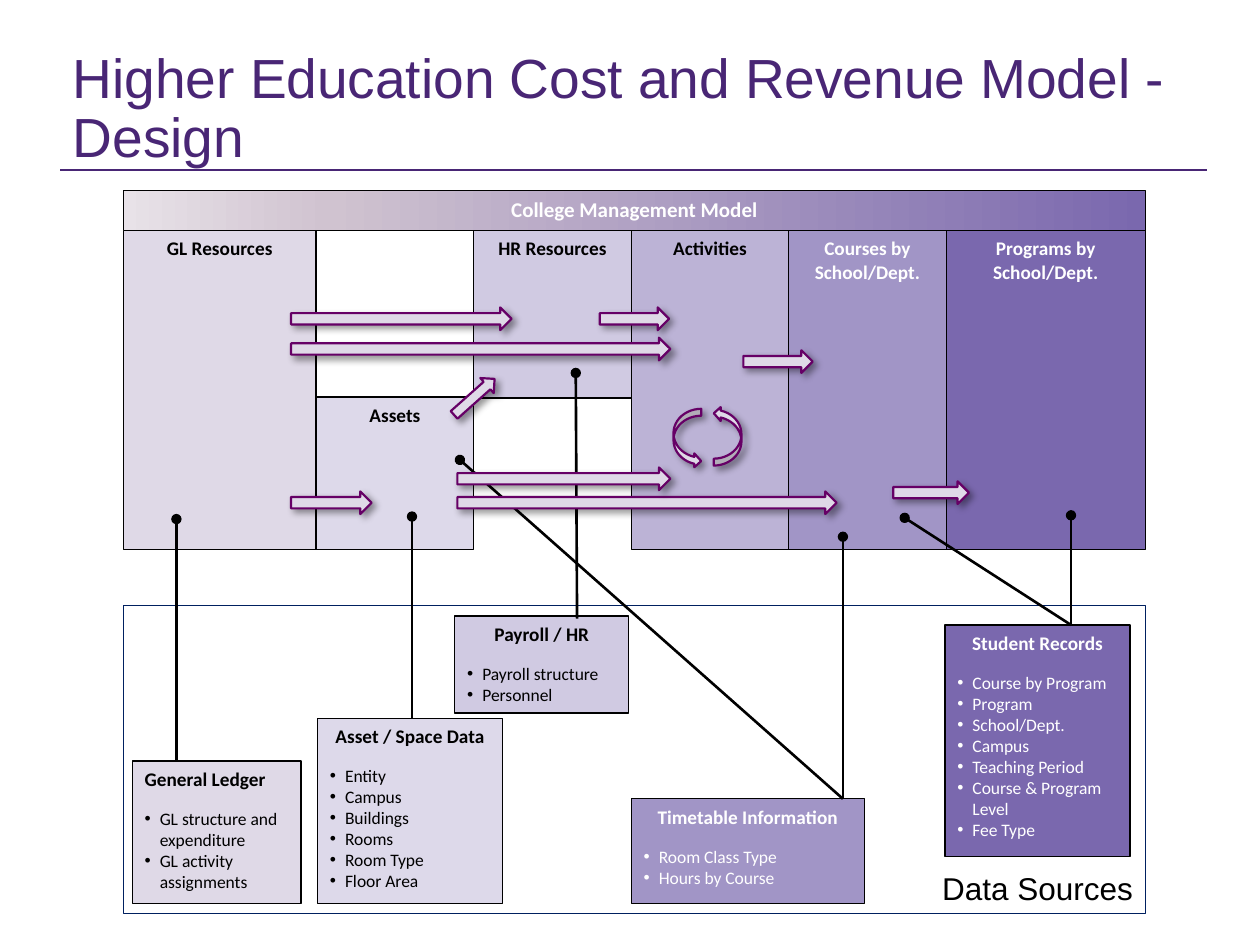
from lxml import etree
from pptx import Presentation
from pptx.dml.color import RGBColor
from pptx.enum.shapes import MSO_CONNECTOR, MSO_SHAPE
from pptx.enum.text import MSO_ANCHOR, PP_ALIGN
from pptx.oxml import parse_xml
from pptx.oxml.ns import nsdecls, qn
from pptx.util import Inches, Pt

WHITE = RGBColor(0xFF, 0xFF, 0xFF)
BLACK = RGBColor(0x00, 0x00, 0x00)
NAVY = RGBColor(0x00, 0x20, 0x60)
TITLE_PURPLE = RGBColor(0x49, 0x26, 0x75)
PURPLE = RGBColor(0x7A, 0x68, 0xAE)
LILAC = RGBColor(0xDF, 0xD9, 0xE7)
PLUM = RGBColor(0x66, 0x00, 0x66)
HEADER_STOPS = ((0, PURPLE), (80, RGBColor(0xD0, 0xC3, 0xD0)), (100, RGBColor(0xE8, 0xE2, 0xE8)))

COLUMN_WIDTHS = (1.53, 1.25, 1.25, 1.25, 1.25, 1.58)
COLUMNS = (
    ("GL Resources", 0, 2.53, LILAC, 100, BLACK),
    ("Assets", 1.32, 1.21, PURPLE, 25, BLACK),
    ("HR Resources", 0, 1.33, PURPLE, 35, BLACK),
    ("Activities", 0, 2.53, PURPLE, 50, BLACK),
    ("Courses by School/Dept.", 0, 2.53, PURPLE, 70, WHITE),
    ("Programs by School/Dept.", 0, 2.53, PURPLE, 100, WHITE),
)
SOURCES = (
    ("General Ledger", (0.07, 1.24, 1.34, 1.13), LILAC, 100, BLACK, PP_ALIGN.LEFT,
     ("GL structure and expenditure", "GL activity assignments")),
    ("Asset / Space Data", (1.54, 0.9, 1.47, 1.47), PURPLE, 25, BLACK, PP_ALIGN.CENTER,
     ("Entity", "Campus", "Buildings", "Rooms", "Room Type", "Floor Area")),
    ("Payroll / HR", (2.63, 0.09, 1.38, 0.77), PURPLE, 35, BLACK, PP_ALIGN.CENTER,
     ("Payroll structure", "Personnel")),
    ("Timetable Information", (4.03, 1.54, 1.85, 0.83), PURPLE, 70, WHITE, PP_ALIGN.CENTER,
     ("Room Class Type", "Hours by Course")),
    ("Student Records", (6.52, 0.16, 1.47, 1.84), PURPLE, 100, WHITE, PP_ALIGN.CENTER,
     ("Course by Program", "Program", "School/Dept.", "Campus", "Teaching Period",
      "Course & Program Level", "Fee Type")),
)
LINKS = (
    (1.4, 6.04, 1.4, 4.12),
    (3.27, 5.7, 3.27, 4.1),
    (4.58, 4.91, 4.57, 2.96),
    (6.69, 6.34, 3.65, 3.65),
    (6.69, 6.34, 6.69, 4.26),
    (8.5, 4.96, 7.18, 4.11),
    (8.5, 4.96, 8.5, 4.09),
)
STRAIGHT, CURVED = MSO_SHAPE.RIGHT_ARROW, MSO_SHAPE.CURVED_UP_ARROW
FLOWS = (
    (STRAIGHT, 1.33, 0.93, 1.75, 0.18, 0),
    (STRAIGHT, 1.33, 1.17, 3.01, 0.18, 0),
    (STRAIGHT, 1.33, 2.39, 0.64, 0.18, 0),
    (STRAIGHT, 2.57, 1.56, 0.43, 0.16, 318.3),
    (STRAIGHT, 2.65, 2.39, 3.01, 0.18, 0),
    (STRAIGHT, 2.65, 2.2, 1.69, 0.18, 0),
    (STRAIGHT, 3.78, 0.93, 0.55, 0.18, 0),
    (STRAIGHT, 4.92, 1.27, 0.55, 0.18, 0),
    (STRAIGHT, 6.11, 2.31, 0.6, 0.18, 0),
    (CURVED, 4.24, 1.86, 0.47, 0.22, 90),
    (CURVED, 4.56, 1.84, 0.47, 0.22, 270),
)


def write(frame, text, size=11, color=BLACK, font="Calibri", bold=False,
          align=PP_ALIGN.LEFT, after=0, spacing=None, bullet=False):
    """Add one formatted paragraph to a text frame."""
    frame.word_wrap = True
    first = frame.paragraphs[0]
    paragraph = frame.add_paragraph() if first.runs else first
    paragraph.alignment, paragraph.space_after = align, Pt(after)
    if spacing:
        paragraph.line_spacing = spacing
    run = paragraph.add_run()
    run.text = text
    run.font.size, run.font.name, run.font.bold = Pt(size), font, bold
    run.font.color.rgb = color
    if bullet:
        properties = paragraph._p.get_or_add_pPr()
        properties.set("marL", str(Inches(0.12)))
        properties.set("indent", str(-Inches(0.12)))
        etree.SubElement(properties, qn("a:buFont"), typeface="Arial")
        etree.SubElement(properties, qn("a:buChar"), char="•")


def add_box(slide, box, fill, opacity=100, line=BLACK, weight=0.75, kind=MSO_SHAPE.RECTANGLE):
    """Add a flat outlined shape with top-anchored text."""
    shape = slide.shapes.add_shape(kind, *map(Inches, box))
    shape.shadow.inherit = False
    shape.fill.solid()
    shape.fill.fore_color.rgb = fill
    if opacity < 100:
        color = shape._element.spPr.find(f"{qn('a:solidFill')}/{qn('a:srgbClr')}")
        etree.SubElement(color, qn("a:alpha"), val=str(opacity * 1000))
    shape.line.color.rgb, shape.line.width = line, Pt(weight)
    shape.text_frame.vertical_anchor = MSO_ANCHOR.TOP
    return shape


def add_line(slide, ends, color, oval=False):
    """Add a straight line, with a round end if asked."""
    connector = slide.shapes.add_connector(MSO_CONNECTOR.STRAIGHT, *map(Inches, ends))
    connector.line.color.rgb, connector.line.width = color, Pt(1.5)
    if oval:
        etree.SubElement(connector.line._get_or_add_ln(), qn("a:tailEnd"), type="oval")
    etree.SubElement(connector._element.spPr, qn("a:effectLst"))


def add_title(slide, left, top, width, height):
    """Place the slide title and the rule below it."""
    frame = slide.shapes.add_textbox(*map(Inches, (left, top, width, height))).text_frame
    frame.vertical_anchor = MSO_ANCHOR.MIDDLE
    write(frame, "Higher Education Cost and Revenue Model - Design",
          size=31.5, color=TITLE_PURPLE, font="Arial", spacing=0.9)
    add_line(slide, (left, top + height, left + width, top + height), TITLE_PURPLE)


def add_model(slide, left, top, width, header_height):
    """Place the model header and the columns below it."""
    x = left
    for column_width, (name, offset, height, fill, opacity, color) in zip(COLUMN_WIDTHS, COLUMNS):
        box = (x, top + header_height + offset, column_width, height)
        column = add_box(slide, box, fill, opacity)
        write(column.text_frame, name, color=color, bold=True, align=PP_ALIGN.CENTER, after=10)
        x += column_width
    header = add_box(slide, (left, top, width, header_height), PURPLE)
    stops = "".join(f'<a:gs pos="{position * 1000}"><a:srgbClr val="{color}"/></a:gs>'
                    for position, color in HEADER_STOPS)
    gradient = parse_xml(f'<a:gradFill {nsdecls("a")}><a:gsLst>{stops}</a:gsLst>'
                         '<a:lin ang="10800000" scaled="0"/></a:gradFill>')
    properties = header._element.spPr
    properties.replace(properties.find(qn("a:solidFill")), gradient)
    write(header.text_frame, "College Management Model", size=12, color=WHITE, bold=True,
          align=PP_ALIGN.CENTER, after=10)


def add_sources(slide, left, top, width, height):
    """Place the data sources panel and its cards."""
    panel = add_box(slide, (left, top, width, height), WHITE, line=NAVY, weight=0.25)
    panel.text_frame.vertical_anchor = MSO_ANCHOR.BOTTOM
    write(panel.text_frame, "Data Sources", size=18, font="Arial", align=PP_ALIGN.RIGHT)
    for name, (x, y, card_width, card_height), fill, opacity, color, align, items in SOURCES:
        card = add_box(slide, (left + x, top + y, card_width, card_height), fill, opacity)
        write(card.text_frame, name, color=color, bold=True, align=align, after=10)
        for item in items:
            write(card.text_frame, item, size=10, color=color, bullet=True)


def add_flows(slide, left, top):
    """Place the shadowed arrows between the model columns."""
    for kind, x, y, width, height, rotation in FLOWS:
        arrow = add_box(slide, (left + x, top + y, width, height), LILAC,
                        line=PLUM, weight=1.25, kind=kind)
        arrow.rotation = rotation
        effects = arrow._element.spPr.find(qn("a:effectLst"))
        shadow = etree.SubElement(effects, qn("a:outerShdw"), blurRad=str(Pt(4)), dist=str(Pt(3)),
                                  dir="2700000", algn="tl", rotWithShape="0")
        color = etree.SubElement(shadow, qn("a:srgbClr"), val=str(BLACK))
        etree.SubElement(color, qn("a:alpha"), val="40000")


def main():
    """Build and save the slide."""
    presentation = Presentation()
    presentation.slide_width, presentation.slide_height = Inches(10), Inches(7.5)
    slide = presentation.slides.add_slide(presentation.slide_layouts[6])
    add_title(slide, 0.48, 0.4, 9.1, 0.95)
    add_sources(slide, 0.98, 4.8, 8.11, 2.45)
    add_model(slide, 0.98, 1.51, 8.11, 0.32)
    for link in LINKS:
        add_line(slide, link, BLACK, oval=True)
    add_flows(slide, 0.98, 1.51)
    presentation.save("out.pptx")


if __name__ == "__main__":
    main()
